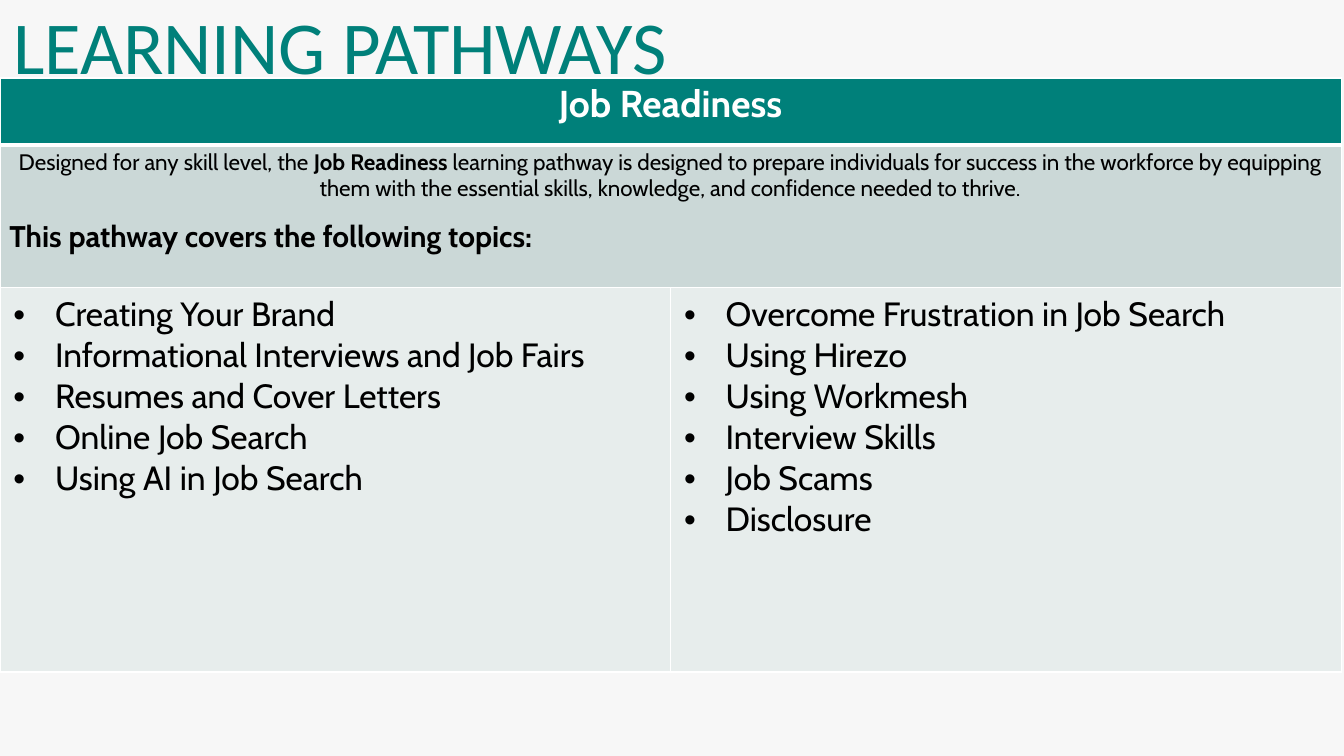
from lxml.etree import SubElement
from pptx import Presentation
from pptx.dml.color import RGBColor
from pptx.enum.text import MSO_ANCHOR as Anchor, PP_ALIGN as Align
from pptx.oxml.ns import qn
from pptx.util import Inches, Pt

TITLE = "LEARNING PATHWAYS"
PATHWAY = "Job Readiness"
SUMMARY = [
    ("Designed for any skill level, the ", False),
    ("Job Readiness ", True),
    ("learning pathway is designed to prepare individuals for success in the workforce "
     "by equipping them with the essential skills, knowledge, and confidence needed to thrive.", False),
]
TOPICS_LEAD = "This pathway covers the following topics:"
TOPICS = [
    ["Creating Your Brand", "Informational Interviews and Job Fairs",
     "Resumes and Cover Letters", "Online Job Search", "Using AI in Job Search"],
    ["Overcome Frustration in Job Search", "Using Hirezo", "Using Workmesh",
     "Interview Skills", "Job Scams", "Disclosure"],
]
TEAL, SAGE, MIST, WHITE, BLACK, PAPER = "00807A", "CBD8D7", "E7EDEC", "FFFFFF", "000000", "F7F7F7"
SLIDE_WIDTH = Inches(10)
SLIDE_HEIGHT = SLIDE_WIDTH * 9 // 16
ROW_HEIGHTS = [0.5, 1.06, 2.86]
ROW_FILLS = [TEAL, SAGE, MIST]
COLUMN_WIDTH = 4.99
THIN, THICK = 0.8, 2.4
HANG = 0.31


def colour(code):
    return RGBColor.from_string(code)


def style(font, size, code, face="Cabin", bold=False):
    font.name, font.size, font.bold = face, Pt(size), bold
    font.color.rgb = colour(code)


def add_borders(cell, top, bottom):
    properties = cell._tc.get_or_add_tcPr()
    for position, (side, width) in enumerate(zip("LRTB", (THIN, THIN, top, bottom))):
        edge = SubElement(properties, qn(f"a:ln{side}"), w=str(Pt(width)))
        solid = SubElement(edge, qn("a:solidFill"))
        SubElement(solid, qn("a:srgbClr"), val=WHITE)
        properties.insert(position, edge)


def add_bullet(paragraph):
    properties = paragraph._p.get_or_add_pPr()
    properties.set("marL", str(Inches(HANG)))
    properties.set("indent", str(-Inches(HANG)))
    SubElement(properties, qn("a:buFont"), typeface="Arial")
    SubElement(properties, qn("a:buChar"), char="•")


def tighten(cell, anchor):
    cell.vertical_anchor = anchor
    cell.margin_left = cell.margin_right = Inches(0.07)
    cell.margin_top = cell.margin_bottom = Inches(0.03)


def add_title(slide):
    box = slide.shapes.add_textbox(0, Inches(-0.15), Inches(9), Inches(0.94))
    frame = box.text_frame
    frame.word_wrap = True
    frame.vertical_anchor = Anchor.MIDDLE
    frame.margin_top = Inches(0.07)
    heading = frame.paragraphs[0]
    heading.text = TITLE
    style(heading.font, 40, TEAL, "Calibri")


def fill_heading(cell):
    tighten(cell, Anchor.MIDDLE)
    heading = cell.text_frame.paragraphs[0]
    heading.text = PATHWAY
    heading.alignment = Align.CENTER
    heading.line_spacing = Pt(16.5)
    style(heading.font, 20, WHITE, bold=True)


def fill_summary(cell):
    tighten(cell, Anchor.TOP)
    summary = cell.text_frame.paragraphs[0]
    summary.alignment = Align.CENTER
    for words, bold in SUMMARY:
        run = summary.add_run()
        run.text = words
        style(run.font, 12, BLACK, bold=bold)
    lead = cell.text_frame.add_paragraph()
    lead.text = TOPICS_LEAD
    lead.space_before = Pt(14.2)
    style(lead.font, 16, BLACK, bold=True)
    for paragraph in (summary, lead):
        paragraph.line_spacing = Pt(14.2)


def fill_topics(cell, topics):
    frame = cell.text_frame
    for index, topic in enumerate(topics):
        paragraph = frame.add_paragraph() if index else frame.paragraphs[0]
        paragraph.text = topic
        add_bullet(paragraph)
        style(paragraph.font, 18, BLACK)


def add_pathway(slide):
    table = slide.shapes.add_table(
        len(ROW_HEIGHTS), len(TOPICS), 0, Inches(0.58),
        Inches(COLUMN_WIDTH * len(TOPICS)), Inches(sum(ROW_HEIGHTS))).table
    table.first_row = table.horz_banding = False
    for column in table.columns:
        column.width = Inches(COLUMN_WIDTH)
    for index, (height, fill) in enumerate(zip(ROW_HEIGHTS, ROW_FILLS)):
        row = table.rows[index]
        row.height = Inches(height)
        for cell in row.cells:
            cell.fill.solid()
            cell.fill.fore_color.rgb = colour(fill)
            add_borders(cell, THICK if index == 1 else THIN, THICK if index == 0 else THIN)
    for index, fill_row in enumerate((fill_heading, fill_summary)):
        table.cell(index, 0).merge(table.cell(index, len(TOPICS) - 1))
        fill_row(table.cell(index, 0))
    for index, topics in enumerate(TOPICS):
        fill_topics(table.cell(2, index), topics)


def main():
    """Build the learning pathway slide."""
    deck = Presentation()
    deck.slide_width, deck.slide_height = SLIDE_WIDTH, SLIDE_HEIGHT
    slide = deck.slides.add_slide(deck.slide_layouts[6])
    slide.background.fill.solid()
    slide.background.fill.fore_color.rgb = colour(PAPER)
    add_title(slide)
    add_pathway(slide)
    deck.save("out.pptx")


if __name__ == "__main__":
    main()
